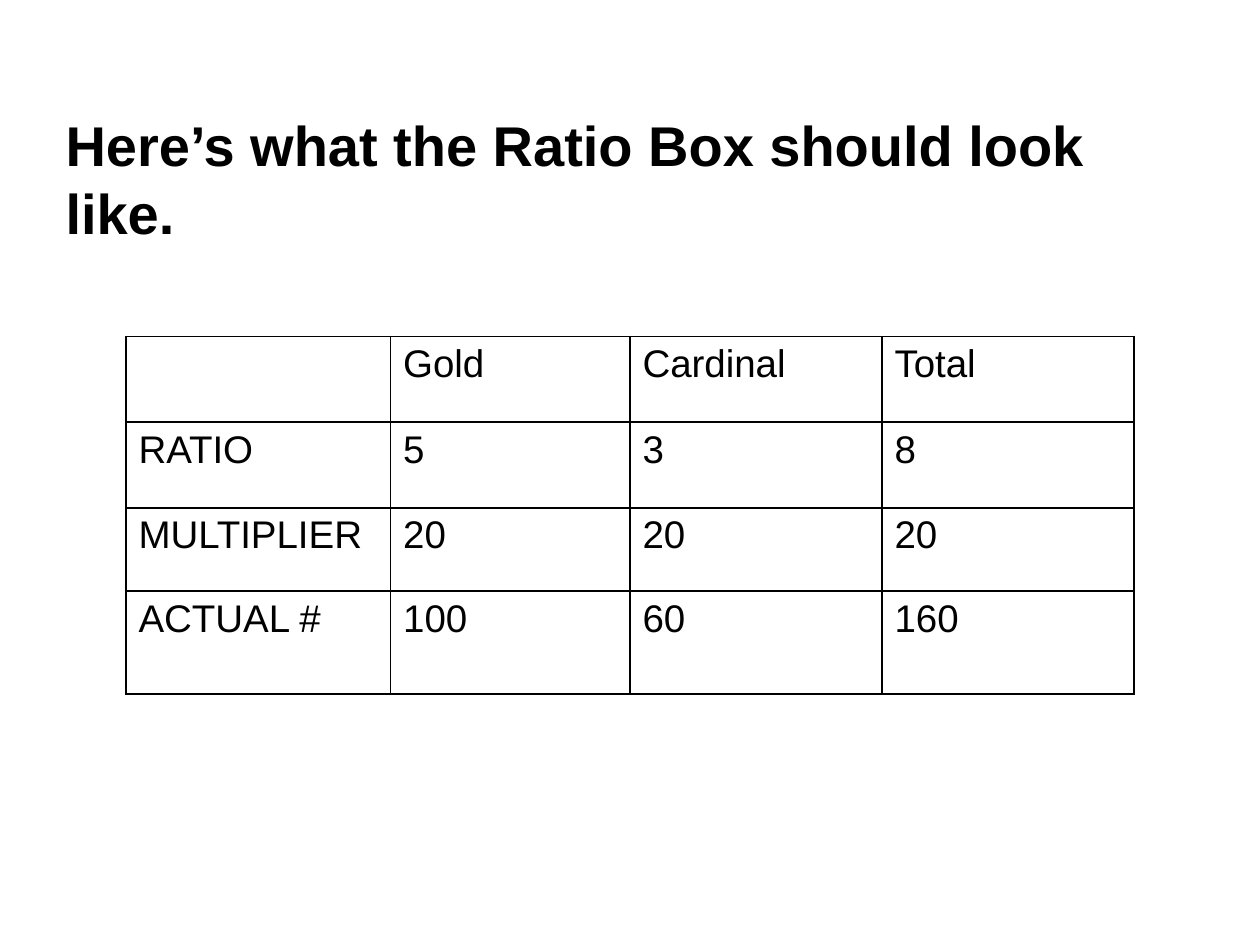
import pptx
import pptx.dml.color
import pptx.enum.text
import pptx.oxml
import pptx.oxml.ns
import pptx.util

Inches = pptx.util.Inches
Pt = pptx.util.Pt

BLACK = "000000"
WHITE = "FFFFFF"
TITLE = {"name": "Arial", "size": Pt(32), "bold": True}
BODY = {"name": "Arial", "size": Pt(22), "bold": False}
COLS = [2.1, 1.9, 2, 2]
ROWS = [0.68, 0.68, 0.66, 0.82]
RATIOS = [
    ["", "Gold", "Cardinal", "Total"],
    ["RATIO", "5", "3", "8"],
    ["MULTIPLIER", "20", "20", "20"],
    ["ACTUAL #", "100", "60", "160"],
]


def color(code):
    return pptx.dml.color.RGBColor.from_string(code)


def style(font, values):
    for key, value in values.items():
        setattr(font, key, value)
    font.color.rgb = color(BLACK)


def add_title(slide, text):
    title = slide.shapes.title
    box = {"left": 0.42, "top": 0.83, "width": 8.67, "height": 1.17}
    for key, value in box.items():
        setattr(title, key, Inches(value))
    frame = title.text_frame
    frame.text = text
    frame.word_wrap = True
    frame.auto_size = pptx.enum.text.MSO_AUTO_SIZE.NONE
    frame.vertical_anchor = pptx.enum.text.MSO_ANCHOR.TOP
    line = frame.paragraphs[0]
    line.alignment = pptx.enum.text.PP_ALIGN.LEFT
    style(line.runs[0].font, TITLE)


def border(cell, code, width):
    """Draw a solid line on all four sides; call before setting the fill."""
    props = cell._tc.get_or_add_tcPr()
    for side in ("lnL", "lnR", "lnT", "lnB"):
        props.append(pptx.oxml.parse_xml(
            f'<a:{side} {pptx.oxml.ns.nsdecls("a")} w="{Pt(width)}">'
            f'<a:solidFill><a:srgbClr val="{code}"/></a:solidFill></a:{side}>'
        ))


def fill_cell(cell, text):
    border(cell, BLACK, 1)
    cell.fill.solid()
    cell.fill.fore_color.rgb = color(WHITE)
    cell.text = text
    style(cell.text_frame.paragraphs[0].font, BODY)
    for run in cell.text_frame.paragraphs[0].runs:
        style(run.font, BODY)


def add_grid(slide, rows):
    table = slide.shapes.add_table(
        len(ROWS), len(COLS), Inches(1), Inches(2.67),
        Inches(sum(COLS)), Inches(sum(ROWS)),
    ).table
    table.first_row = table.horz_banding = False
    for col, width in zip(table.columns, COLS):
        col.width = Inches(width)
    for row, height, texts in zip(table.rows, ROWS, rows):
        row.height = Inches(height)
        for cell, text in zip(row.cells, texts):
            fill_cell(cell, text)


def main():
    deck = pptx.Presentation()
    deck.slide_width = Inches(10)
    deck.slide_height = Inches(7.5)
    slide = deck.slides.add_slide(deck.slide_layouts.get_by_name("Title Only"))
    add_title(slide, "Here’s what the Ratio Box should look like.")
    add_grid(slide, RATIOS)
    deck.save("out.pptx")


if __name__ == "__main__":
    main()
